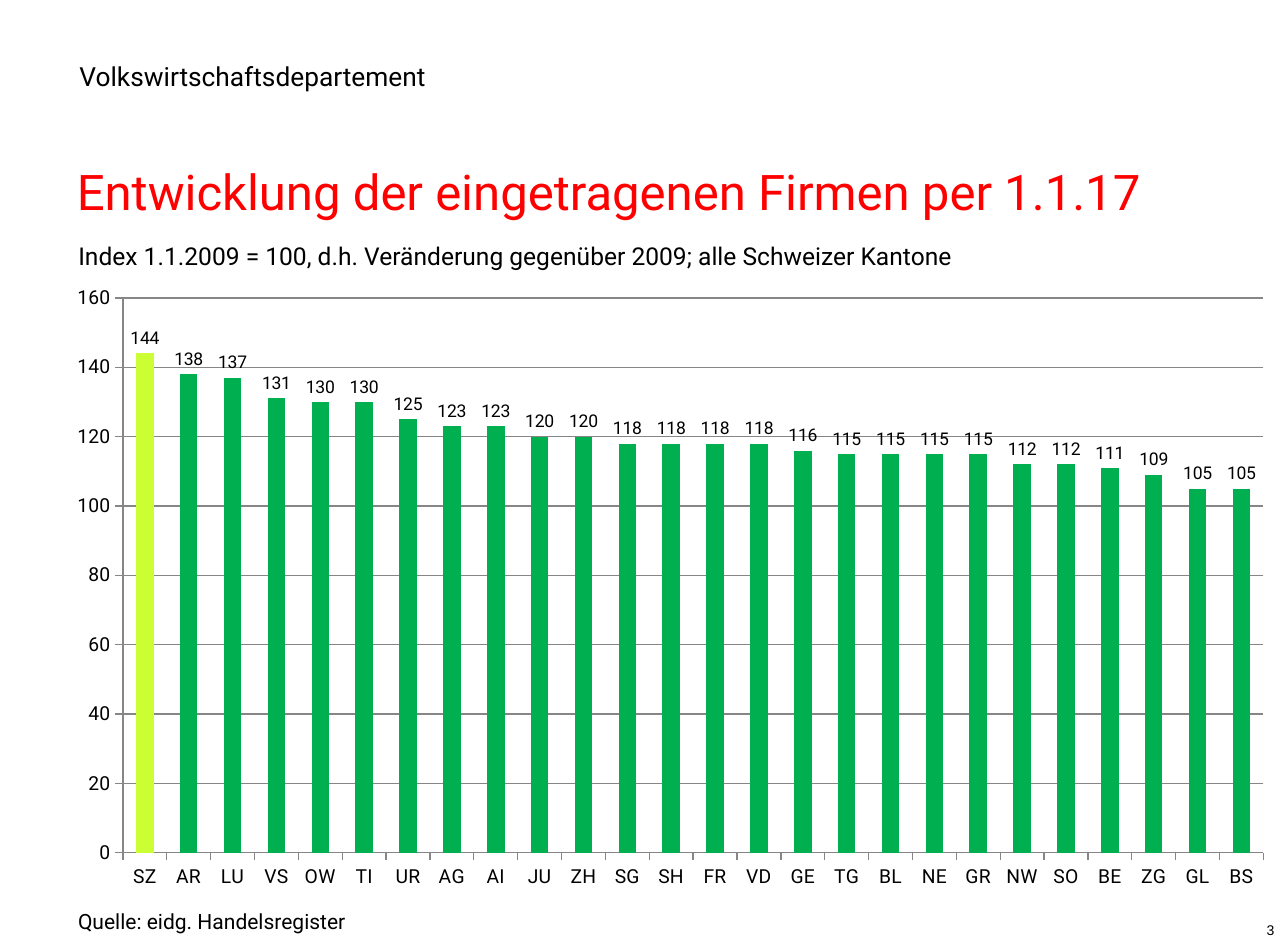
from lxml import etree
from pptx import Presentation
from pptx import util as u
from pptx.chart.data import CategoryChartData
from pptx.dml.color import RGBColor
from pptx.enum import chart as c, shapes, text
from pptx.oxml.ns import qn

BLACK = RGBColor(0, 0, 0)
WHITE = RGBColor(0xFF, 0xFF, 0xFF)
RED = RGBColor(0xFF, 0, 0)
GREEN = RGBColor(0, 0xB0, 0x50)
LIME = RGBColor(0xCC, 0xFF, 0x33)
GREY = RGBColor(0x86, 0x86, 0x86)

# Content: text, box (left, top, width, height), insets (left, top, right, bottom), font
INSETS = (0.1, 0.05, 0.1, 0.05)
department = ("Volkswirtschaftsdepartement", (0.63, 0.48, 2.97, 0.59), (0, 0, 0, 0),
              dict(name="Roboto", size=15, color=BLACK))
title = ("Entwicklung der eingetragenen Firmen per 1.1.17", (0.51, 1.23, 9.34, 0.57), INSETS,
         dict(name="Roboto", size=28, color=RED))
subtitle = ("Index 1.1.2009 = 100, d.h. Veränderung gegenüber 2009; alle Schweizer Kantone",
            (0.54, 1.79, 9.28, 0.35), (0.08, 0, 0, 0),
            dict(name="Roboto", size=14, color=BLACK))
origin = ("Quelle: eidg. Handelsregister", (0.52, 7.15, 3.7, 0.3), INSETS,
          dict(name="Roboto", size=12, color=BLACK))
page_number = ("3", (8.07, 7.25, 2.12, 0.25), INSETS,
               dict(name="Arial", size=8, color=BLACK))

firm_index = {
    "SZ": 144, "AR": 138, "LU": 137, "VS": 131, "OW": 130, "TI": 130, "UR": 125,
    "AG": 123, "AI": 123, "JU": 120, "ZH": 120, "SG": 118, "SH": 118, "FR": 118,
    "VD": 118, "GE": 116, "TG": 115, "BL": 115, "NE": 115, "GR": 115, "NW": 112,
    "SO": 112, "BE": 111, "ZG": 109, "GL": 105, "BS": 105,
}
highlight = "SZ"
chart_box = (0.53, 2.25, 9.65, 4.79)
plot_layout = dict(x=0.046, y=0.023, w=0.936, h=0.918)


def inches(box):
    return [u.Inches(length) for length in box]


def set_font(font, name, size, color):
    for key, value in dict(name=name, size=u.Pt(size), bold=False).items():
        setattr(font, key, value)
    font.color.rgb = color


def write(shape, words, insets, font):
    frame = shape.text_frame
    margins = zip(("left", "top", "right", "bottom"), inches(insets))
    settings = {f"margin_{side}": length for side, length in margins}
    settings |= dict(word_wrap=True, vertical_anchor=text.MSO_ANCHOR.TOP)
    for key, value in settings.items():
        setattr(frame, key, value)
    line = frame.paragraphs[0]
    line.alignment = text.PP_ALIGN.LEFT
    run = line.add_run()
    run.text = words
    set_font(run.font, **font)
    return line


def add_text(slide, words, box, insets, font):
    return write(slide.shapes.add_textbox(*inches(box)), words, insets, font)


def add_subtitle(slide, words, box, insets, font):
    band = slide.shapes.add_shape(shapes.MSO_SHAPE.RECTANGLE, *inches(box))
    band.shadow.inherit = False
    band.fill.solid()
    band.fill.fore_color.rgb = WHITE
    band.line.fill.background()
    write(band, words, insets, font).line_spacing = 1.5


def add_index_chart(slide):
    data = CategoryChartData(number_format="0")
    data.categories = list(firm_index)
    data.add_series("Series 1", list(firm_index.values()))
    chart = slide.shapes.add_chart(
        c.XL_CHART_TYPE.COLUMN_CLUSTERED, *inches(chart_box), data).chart
    chart.has_legend = chart.has_title = False
    set_font(chart.font, "Arial", 10, BLACK)

    # Axes
    for axis in (chart.category_axis, chart.value_axis):
        axis.major_tick_mark = c.XL_TICK_MARK.OUTSIDE
        axis.minor_tick_mark = c.XL_TICK_MARK.NONE
        axis.format.line.color.rgb = GREY
        set_font(axis.tick_labels.font, "Roboto", 11, BLACK)
    scale = dict(minimum_scale=0, maximum_scale=160, major_unit=20, has_major_gridlines=True)
    for key, value in scale.items():
        setattr(chart.value_axis, key, value)
    chart.value_axis.major_gridlines.format.line.color.rgb = GREY
    chart.value_axis.tick_labels.number_format = "0"
    chart.value_axis.tick_labels.number_format_is_linked = False

    # Columns and their labels
    plot = chart.plots[0]
    plot.gap_width = 150
    plot.vary_by_categories = False
    columns = plot.series[0]
    columns.invert_if_negative = False
    bars = [(columns, GREEN), (columns.points[list(firm_index).index(highlight)], LIME)]
    for bar, color in bars:
        bar.format.fill.solid()
        bar.format.fill.fore_color.rgb = color
    labels = columns.data_labels
    label_format = dict(show_value=True, number_format="0", number_format_is_linked=False,
                        position=c.XL_LABEL_POSITION.OUTSIDE_END)
    for key, value in label_format.items():
        setattr(labels, key, value)
    set_font(labels.font, "Roboto", 10, BLACK)

    # Inner plot area
    plot_area = plot._element.getparent()
    for old in plot_area.findall(qn("c:layout")):
        plot_area.remove(old)
    layout = etree.Element(qn("c:layout"))
    manual = etree.SubElement(layout, qn("c:manualLayout"))
    values = dict(layoutTarget="inner", xMode="edge", yMode="edge") | plot_layout
    for tag, value in values.items():
        etree.SubElement(manual, qn(f"c:{tag}")).set("val", str(value))
    plot_area.insert(0, layout)


def main():
    deck = Presentation()
    deck.slide_width, deck.slide_height = inches((10.2, 7.5))
    slide = deck.slides.add_slide(deck.slide_layouts[6])
    for part in (department, title, origin):
        add_text(slide, *part)
    add_text(slide, *page_number).alignment = text.PP_ALIGN.RIGHT
    add_subtitle(slide, *subtitle)
    add_index_chart(slide)
    deck.save("out.pptx")


if __name__ == "__main__":
    main()
